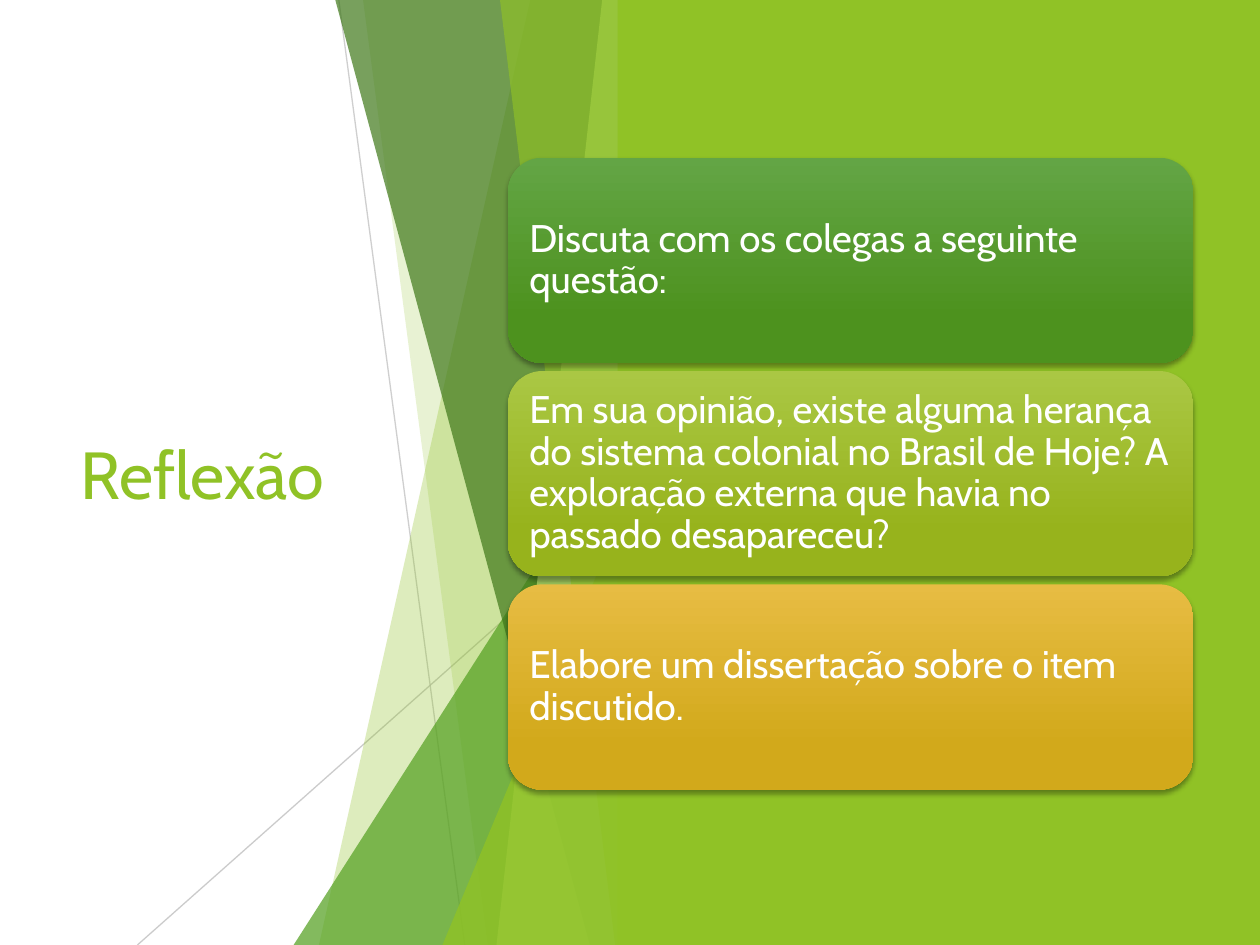
from lxml import etree
from pptx import Presentation
from pptx.dml.color import RGBColor
from pptx.enum.shapes import MSO_CONNECTOR, MSO_SHAPE
from pptx.enum.text import MSO_ANCHOR, MSO_AUTO_SIZE, PP_ALIGN
from pptx.oxml.ns import qn
from pptx.util import Cm, Pt

LINE = MSO_CONNECTOR.STRAIGHT
RECT = MSO_SHAPE.RECTANGLE
ROUND = MSO_SHAPE.ROUNDED_RECTANGLE
WEDGE = MSO_SHAPE.ISOSCELES_TRIANGLE
MIDDLE = MSO_ANCHOR.MIDDLE
LEFT = PP_ALIGN.LEFT
NO_FIT = MSO_AUTO_SIZE.NONE

WIDTH, HEIGHT = 25.4, 19.05
EDGE = 12.7
LIME, GREEN, DARK, PALE, GREY = "90C226", "54A021", "3F7819", "C0E474", "BFBFBF"

RAYS = [(6.83, 0, 9.37, 75), (EDGE, 10.24, 2.77, 80)]
BACK = [(10.69, 6.43, LIME, 30), (7.32, 9.83, LIME, 20)]
FRONT = [(6.76, 11.89, DARK, 70), (12.14, 10.01, PALE, 70), (10.08, 12.4, LIME, 65)]
CARDS = [
    ("Discuta com os colegas a seguinte questão:", "63A545", "4D921E"),
    ("Em sua opinião, existe alguma herança do sistema colonial no Brasil de Hoje? "
     "A exploração externa que havia no passado desapareceu?", "AAC744", "97B31C"),
    ("Elabore um dissertação sobre o item discutido.", "E7BC43", "D2A91B"),
]


def tint(code):
    """Turn a hex string into a colour."""
    return RGBColor.from_string(code)


def fade(shape, alpha):
    """Set the opacity of the first colour of a shape, in percent."""
    color = shape._element.spPr.xpath(".//a:srgbClr")[0]
    etree.SubElement(color, qn("a:alpha"), val=str(alpha * 1000))


def paint(shape, code, alpha=100):
    """Give a shape a flat fill without line or shadow."""
    shape.shadow.inherit = False
    shape.fill.solid()
    shape.fill.fore_color.rgb = tint(code)
    shape.line.fill.background()
    if alpha < 100:
        fade(shape, alpha)


def write(shape, text, size, code="FFFFFF", font="Cabin", inset=0.25, space=1.0):
    """Put left-aligned, vertically centred text into a shape."""
    frame = shape.text_frame
    frame.text = text
    frame.word_wrap = True
    frame.auto_size = NO_FIT
    frame.vertical_anchor = MIDDLE
    frame.margin_left = frame.margin_right = Cm(inset)
    frame.margin_top = frame.margin_bottom = Cm(inset)
    par = frame.paragraphs[0]
    par.alignment = LEFT
    par.line_spacing = space
    face = par.runs[0].font
    face.name, face.size, face.color.rgb = font, Pt(size), tint(code)


def ray(slide, left, top, right, alpha):
    """Draw a thin line down to the bottom of the slide."""
    line = slide.shapes.add_connector(LINE, Cm(left), Cm(top), Cm(right), Cm(HEIGHT))
    line.line.color.rgb = tint(GREY)
    line.line.width = Pt(0.75)
    fade(line, alpha)
    etree.SubElement(line._element.spPr, qn("a:effectLst"))


def strip(slide, top, base, code, alpha):
    """Draw a full-height band with a slanted left side."""
    path = slide.shapes.build_freeform(Cm(top), 0)
    points = [(EDGE, 0), (EDGE, HEIGHT), (base, HEIGHT)]
    path.add_line_segments([(Cm(x), Cm(y)) for x, y in points])
    paint(path.convert_to_shape(), code, alpha)


def wedge(slide, left, top, code, alpha):
    """Draw a right triangle that rises to the edge of the panel."""
    shape = slide.shapes.add_shape(
        WEDGE, Cm(left), Cm(top), Cm(EDGE - left), Cm(HEIGHT - top))
    shape.adjustments[0] = 1
    paint(shape, code, alpha)


def shade(shape):
    """Add a soft shadow below a shape."""
    shape.shadow.inherit = False
    effects = shape._element.spPr.find(qn("a:effectLst"))
    outer = etree.SubElement(
        effects, qn("a:outerShdw"), blurRad=str(Pt(3)), dist=str(Pt(2)),
        dir="5400000", rotWithShape="0")
    black = etree.SubElement(outer, qn("a:srgbClr"), val="000000")
    etree.SubElement(black, qn("a:alpha"), val="35000")


def card(slide, top, text, light, deep):
    """Draw a rounded card with a downward gradient."""
    shape = slide.shapes.add_shape(ROUND, Cm(10.24), Cm(top), Cm(13.82), Cm(4.14))
    shade(shape)
    shape.line.fill.background()
    shape.fill.gradient()
    shape.fill.gradient_angle = 270
    for stop, code, place in zip(shape.fill.gradient_stops, (light, deep), (0, 0.78)):
        stop.color.rgb = tint(code)
        stop.position = place
    write(shape, text, size=22, inset=0.23, space=0.9)


def main():
    """Build the slide and save it."""
    deck = Presentation()
    deck.slide_width, deck.slide_height = Cm(WIDTH), Cm(HEIGHT)
    slide = deck.slides.add_slide(deck.slide_layouts[5])

    title = slide.shapes.title
    title.left, title.top, title.width, title.height = Cm(1.37), Cm(3.84), Cm(7.39), Cm(11.38)
    write(title, "Reflexão", size=38, code=LIME)

    for item in RAYS:
        ray(slide, *item)
    for item in BACK:
        strip(slide, *item)
    wedge(slide, 5.92, 8.46, GREEN, 72)
    for item in FRONT:
        strip(slide, *item)
    wedge(slide, 8.92, 9.98, LIME, 80)

    panel = slide.shapes.add_shape(RECT, Cm(12.45), 0, Cm(WIDTH - 12.45), Cm(HEIGHT))
    paint(panel, LIME)
    for row, item in enumerate(CARDS):
        card(slide, 3.18 + 4.3 * row, *item)
    deck.save("out.pptx")


if __name__ == "__main__":
    main()
